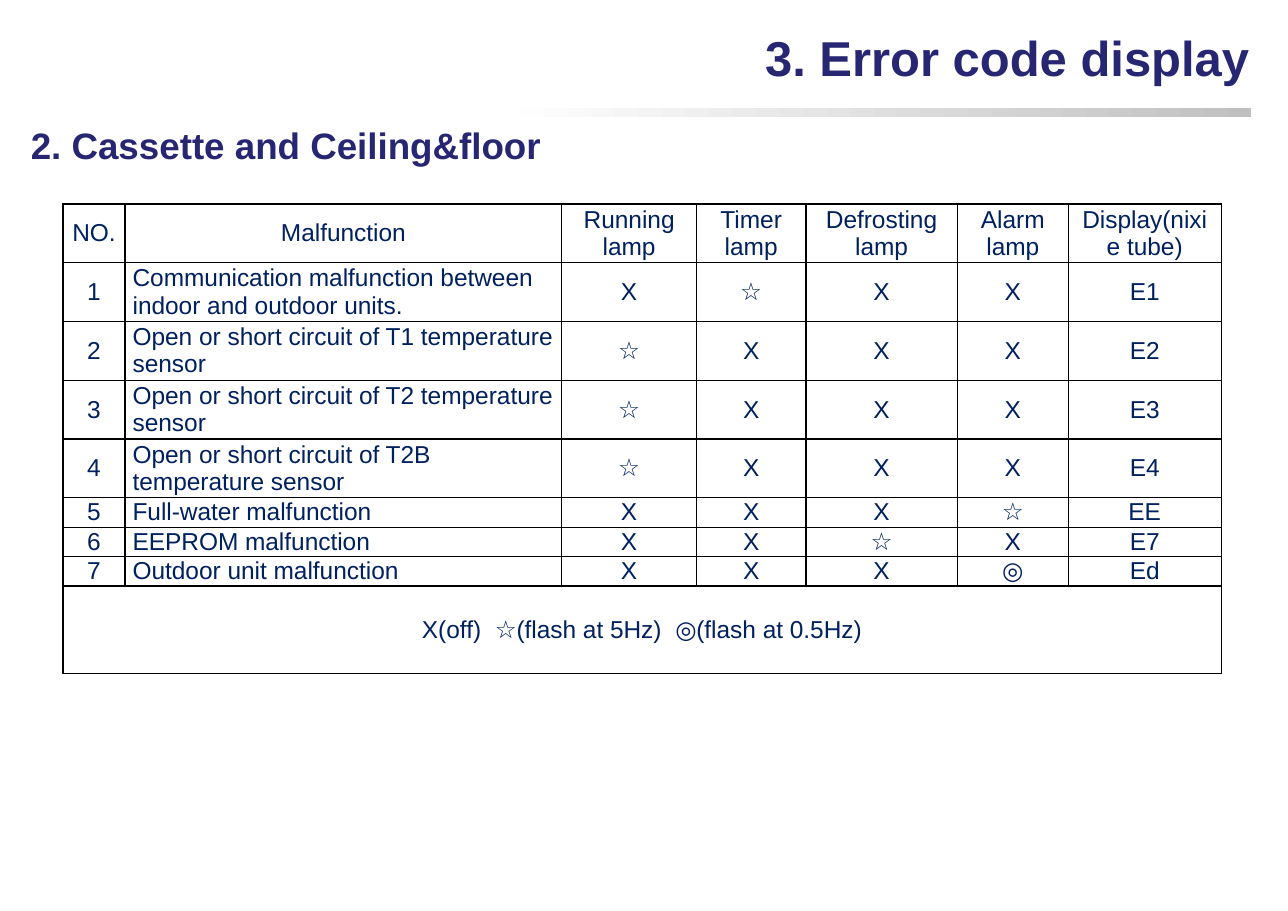
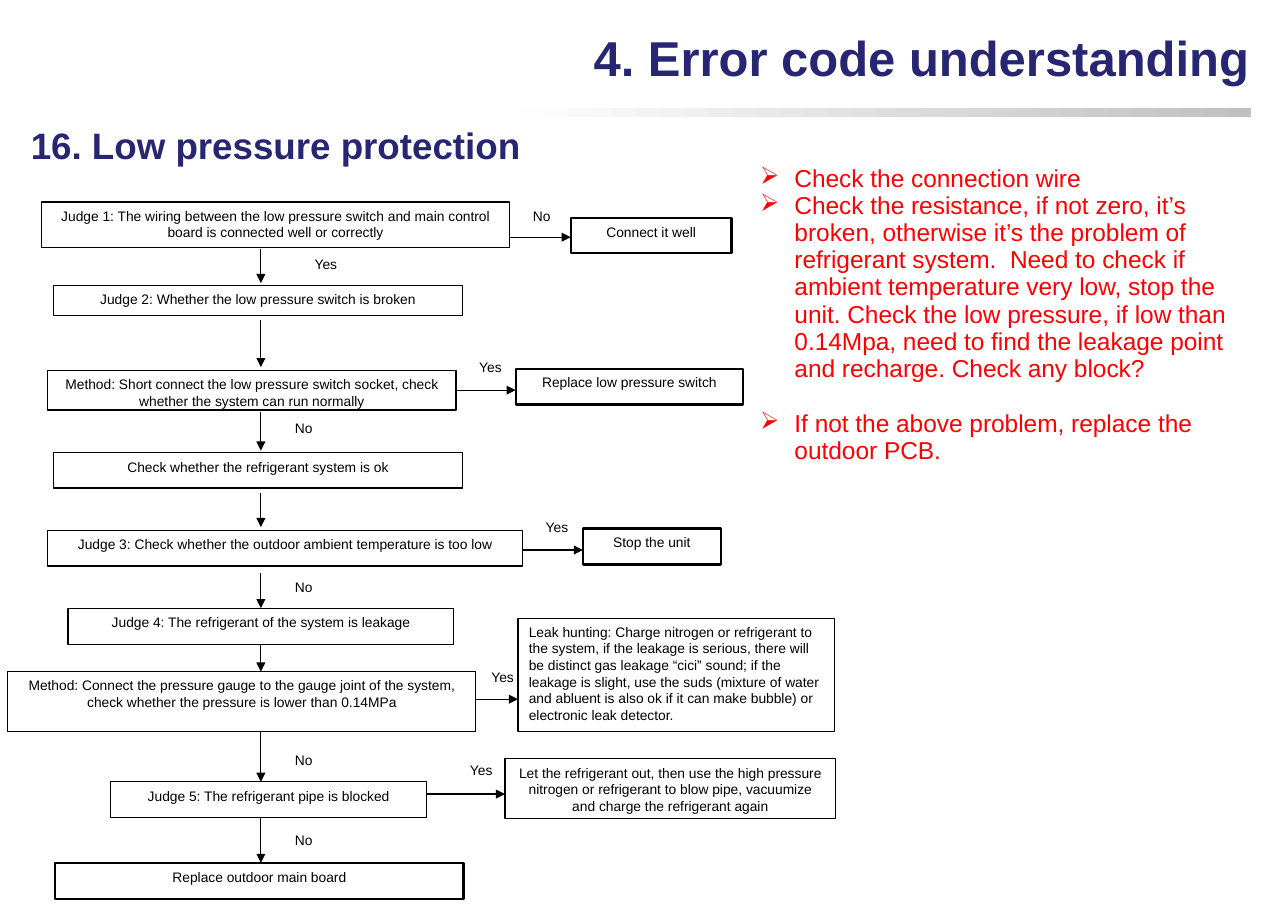
from dataclasses import dataclass

from lxml.etree import SubElement
from pptx import Presentation
from pptx.dml.color import RGBColor
from pptx.enum.shapes import MSO_CONNECTOR as Connector, MSO_SHAPE as Preset
from pptx.enum.text import MSO_ANCHOR as Anchor, PP_ALIGN as Align
from pptx.oxml.ns import qn
from pptx.util import Pt


@dataclass(frozen=True)
class Theme:
    font: str = "Arial"
    heading: str = "262673"
    table_text: str = "002060"
    advice: str = "FF0000"
    ink: str = "000000"
    paper: str = "FFFFFF"
    band_end: str = "C0C0C0"
    title_size: int = 32
    subtitle_size: int = 24
    body_size: int = 16
    chart_size: int = 9
    thin: float = 0.75
    thick: float = 1.5
    grid: float = 1


THEME = Theme()


@dataclass(frozen=True)
class Action:
    """Box to the right of a step, with the label and height of its arrow."""
    text: str
    box: tuple
    arrow_y: float
    answer: str
    answer_at: tuple
    weight: float = THEME.thick
    align: Align = Align.CENTER


@dataclass(frozen=True)
class Step:
    """Box in the main column; gaps are those around the arrow below it."""
    text: str
    box: tuple
    gaps: tuple = (0, 0)
    answer: str = ""
    answer_at: tuple = ()
    action: Action = None
    weight: float = THEME.thin


NO_X = 175.5
SPINE_X = 165.5
LABEL_SIZE = (36, 23)

STEPS = [
    Step("Judge 1: The wiring between the low pressure switch and main control "
         "board is connected well or correctly",
         (22, 0, 306, 29.5), (1.5, 1.5), "Yes", (190, 31.5),
         Action("Connect it well", (368, 10.5, 105, 23), 23, "No", (331, 0))),
    Step("Judge 2: Whether the low pressure switch is broken",
         (30, 54.5, 267, 19.5), (3, 2)),
    Step("Method: Short connect the low pressure switch socket, check whether "
         "the system can run normally",
         (26, 110, 267, 26), (1.5, 1.5), "No", (NO_X, 138.5),
         Action("Replace low pressure switch", (332, 109, 148.5, 23.5), 123,
                "Yes", (297.5, 99))),
    Step("Check whether the refrigerant system is ok",
         (30, 164, 267, 23), (3, 2)),
    Step("Judge 3: Check whether the outdoor ambient temperature is too low",
         (26, 214.5, 310.5, 23.5), (4.5, 0), "No", (NO_X, 242.5),
         Action("Stop the unit", (376, 213.5, 90, 23.5), 227.5,
                "Yes", (341, 203.5))),
    Step("Judge 4: The refrigerant of the system is leakage",
         (39.5, 265.5, 252, 23.5)),
    Step("Method: Connect the pressure gauge to the gauge joint of the system, "
         "check whether the pressure is lower than 0.14MPa",
         (0, 307, 306, 39), (0, 0), "No", (NO_X, 355.5),
         Action("Leak hunting: Charge nitrogen or refrigerant to the system, if "
                "the leakage is serious, there will be distinct gas leakage "
                "“cici” sound; if the leakage is slight, use the suds (mixture "
                "of water and abluent is also ok if it can make bubble) or "
                "electronic leak detector.",
                (333.5, 272, 207, 74), 325, "Yes", (305.5, 301.5),
                THEME.thin, Align.LEFT)),
    Step("Judge 5: The refrigerant pipe is blocked",
         (67, 379, 207, 23.5), (0, 0), "No", (NO_X, 408),
         Action("Let the refrigerant out, then use the high pressure nitrogen or "
                "refrigerant to blow pipe, vacuumize and charge the refrigerant "
                "again",
                (325, 364, 216, 39), 387, "Yes", (291.5, 362.5), THEME.thin)),
    Step("Replace outdoor main board", (31, 432, 267, 23.5), weight=THEME.thick),
]

COLUMN_WIDTHS = [40.5, 285.5, 88, 71.5, 99, 72.5, 100]
ROW_HEIGHTS = [38.4] * 5 + [19.2] * 3 + [57]
ERROR_ROWS = [
    ("NO.", "Malfunction", "Running lamp", "Timer lamp", "Defrosting lamp",
     "Alarm lamp", "Display(nixie tube)"),
    ("1", "Communication malfunction between indoor and outdoor units.",
     "X", "☆", "X", "X", "E1"),
    ("2", "Open or short circuit of T1 temperature sensor",
     "☆", "X", "X", "X", "E2"),
    ("3", "Open or short circuit of T2 temperature sensor",
     "☆", "X", "X", "X", "E3"),
    ("4", "Open or short circuit of T2B temperature sensor",
     "☆", "X", "X", "X", "E4"),
    ("5", "Full-water malfunction", "X", "X", "X", "☆", "EE"),
    ("6", "EEPROM malfunction", "X", "X", "☆", "X", "E7"),
    ("7", "Outdoor unit malfunction", "X", "X", "X", "◎", "Ed"),
]
LEGEND = "X(off)  ☆(flash at 5Hz)  ◎(flash at 0.5Hz)"

# Advice text with the space before each point
ADVICE = [
    ("Check the connection wire", 0),
    ("Check the resistance, if not zero, it’s broken, otherwise it’s the problem "
     "of refrigerant system.  Need to check if ambient temperature very low, stop "
     "the unit. Check the low pressure, if low than 0.14Mpa, need to find the "
     "leakage point and recharge. Check any block?", 0),
    ("If not the above problem, replace the outdoor PCB.", 18),
]


# Basic parts

def points(*lengths):
    return [Pt(length) for length in lengths]


def color(code):
    return RGBColor.from_string(code)


def write(para, text, size, ink, align=Align.LEFT, bold=False):
    para.text = text
    para.alignment = align
    font = para.font
    font.name, font.size, font.bold = THEME.font, Pt(size), bold
    font.color.rgb = color(ink)


def add_heading(page, box, text, size, align):
    frame = page.shapes.add_textbox(*points(*box)).text_frame
    frame.word_wrap = True
    write(frame.paragraphs[0], text, size, THEME.heading, align, bold=True)


def add_box(page, box, text, weight=0, align=Align.CENTER):
    shape = page.shapes.add_shape(Preset.RECTANGLE, *points(*box))
    shape.shadow.inherit = False
    shape.fill.solid()
    shape.fill.fore_color.rgb = color(THEME.paper)
    if weight:
        shape.line.color.rgb = color(THEME.ink)
        shape.line.width = Pt(weight)
    else:
        shape.line.fill.background()
    frame = shape.text_frame
    frame.word_wrap = True
    frame.vertical_anchor = Anchor.TOP
    write(frame.paragraphs[0], text, THEME.chart_size, THEME.ink, align)


def add_arrow(page, start, end):
    arrow = page.shapes.add_connector(Connector.STRAIGHT, *points(*start, *end))
    arrow.line.color.rgb = color(THEME.ink)
    arrow.line.width = Pt(THEME.thin)
    properties = arrow._element.spPr
    SubElement(properties.find(qn("a:ln")), qn("a:tailEnd"), type="triangle")
    SubElement(properties, qn("a:effectLst"))


def add_grid(page, left, top, widths, heights):
    frame = page.shapes.add_table(
        len(heights), len(widths),
        *points(left, top, sum(widths), sum(heights)))
    table = frame.table
    table.first_row = table.horz_banding = False
    for column, width in zip(table.columns, widths):
        column.width = Pt(width)
    for row, height in zip(table.rows, heights):
        row.height = Pt(height)
    return table


def style_cell(cell, border, margin):
    cell.vertical_anchor = Anchor.MIDDLE
    cell.margin_left = cell.margin_right = Pt(margin)
    cell.margin_top = cell.margin_bottom = 0
    properties = cell._tc.get_or_add_tcPr()
    for side in ("L", "R", "T", "B"):
        line = SubElement(properties, qn(f"a:ln{side}"), w=str(Pt(THEME.grid)))
        fill = SubElement(line, qn("a:solidFill"))
        SubElement(fill, qn("a:srgbClr"), val=border)
    cell.fill.background()


# Shared page frame

def add_page(deck, title, subtitle):
    page = deck.slides.add_slide(deck.slide_layouts[6])
    band = page.shapes.add_shape(Preset.RECTANGLE, *points(324.5, 70.5, 493, 6))
    band.shadow.inherit = False
    band.line.fill.background()
    band.fill.gradient()
    band.fill.gradient_angle = 0
    stops = zip(band.fill.gradient_stops, (THEME.paper, THEME.band_end), (0, 1))
    for stop, shade, position in stops:
        stop.color.rgb = color(shade)
        stop.position = position
    add_heading(page, (324, 14.5, 500, 46), title, THEME.title_size, Align.RIGHT)
    add_heading(page, (13, 76.5, 480, 36), subtitle, THEME.subtitle_size,
                Align.LEFT)
    return page


# Regions

def add_error_table(page, left, top):
    table = add_grid(page, left, top, COLUMN_WIDTHS, ROW_HEIGHTS)
    for cell in table.iter_cells():
        style_cell(cell, THEME.ink, 5)
    for r, row in enumerate(ERROR_ROWS):
        for c, text in enumerate(row):
            align = Align.LEFT if r and c == 1 else Align.CENTER
            write(table.cell(r, c).text_frame.paragraphs[0], text,
                  THEME.body_size, THEME.table_text, align)
    last = len(ERROR_ROWS)
    legend = table.cell(last, 0)
    legend.merge(table.cell(last, len(COLUMN_WIDTHS) - 1))
    write(legend.text_frame.paragraphs[0], LEGEND, THEME.body_size,
          THEME.table_text, Align.CENTER)


def add_flowchart(page, left, top):
    def place(x, y, *size):
        return (left + x, top + y, *size)

    branches = [step for step in STEPS if step.action]
    # Answers lie beneath the boxes
    for part in STEPS + [step.action for step in branches]:
        if part.answer:
            add_box(page, place(*part.answer_at, *LABEL_SIZE), part.answer)
    for step in STEPS:
        add_box(page, place(*step.box), step.text, step.weight)
    # Actions and the arrows to them
    for step in branches:
        action = step.action
        add_box(page, place(*action.box), action.text, action.weight,
                action.align)
        x, _, width, _ = step.box
        add_arrow(page, place(x + width, action.arrow_y),
                  place(action.box[0], action.arrow_y))
    # Arrows down the main column
    for step, following in zip(STEPS, STEPS[1:]):
        _, y, _, height = step.box
        leave, arrive = step.gaps
        add_arrow(page, place(SPINE_X, y + height + leave),
                  place(SPINE_X, following.box[1] - arrive))


def add_advice(page, left, top, width, height):
    cell = add_grid(page, left, top, [width], [height]).cell(0, 0)
    style_cell(cell, THEME.paper, 0.7)
    frame = cell.text_frame
    for index, (text, space) in enumerate(ADVICE):
        para = frame.add_paragraph() if index else frame.paragraphs[0]
        properties = para._p.get_or_add_pPr()
        properties.set("marL", str(Pt(22.5)))
        properties.set("indent", str(-Pt(22.5)))
        SubElement(properties, qn("a:buChar"), char="➢")
        if space:
            para.space_before = Pt(space)
        write(para, text, THEME.body_size, THEME.advice)


def main():
    deck = Presentation()
    deck.slide_width, deck.slide_height = points(841.68, 595.44)
    page = add_page(deck, "3. Error code display", "2. Cassette and Ceiling&floor")
    add_error_table(page, 41.2, 133.3)
    page = add_page(deck, "4. Error code understanding",
                    "16. Low pressure protection")
    add_flowchart(page, 5, 132)
    add_advice(page, 496, 100, 326, 211.5)
    deck.save("out.pptx")


if __name__ == "__main__":
    main()
